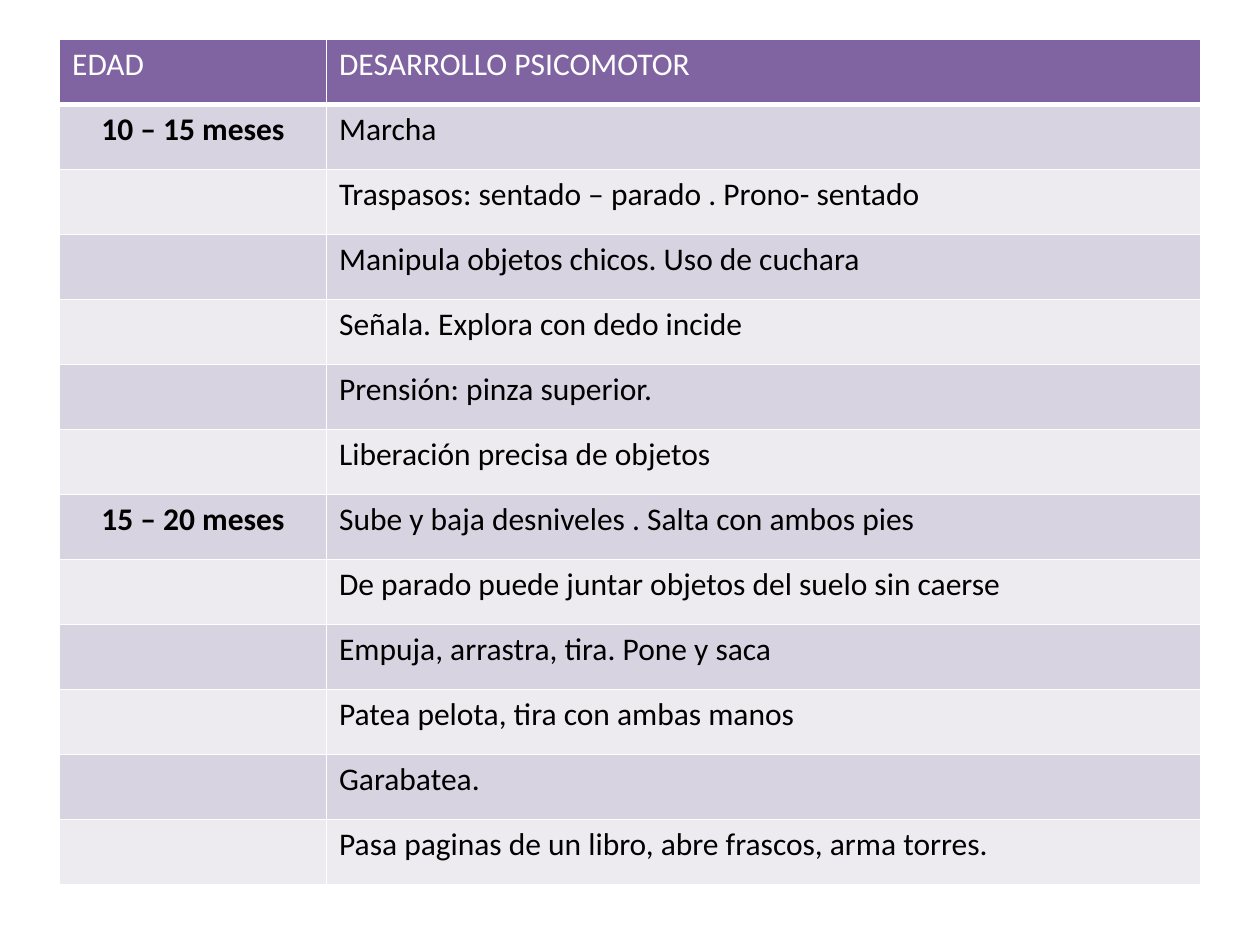
import lxml.etree
import pptx
import pptx.dml.color
import pptx.enum.text
import pptx.oxml.ns
import pptx.util

COLOURS = {
    "header": "8064A2",
    "dark_band": "D8D3E0",
    "light_band": "EDEAF0",
    "white": "FFFFFF",
    "black": "000000",
}
HEADINGS = ("EDAD", "DESARROLLO PSICOMOTOR")
STAGES = {
    "10 – 15 meses": (
        "Marcha",
        "Traspasos: sentado – parado . Prono- sentado",
        "Manipula objetos chicos. Uso de cuchara",
        "Señala. Explora con dedo incide",
        "Prensión: pinza superior.",
        "Liberación precisa de objetos",
    ),
    "15 – 20 meses": (
        "Sube y baja desniveles . Salta con ambos pies",
        "De parado puede juntar objetos del suelo sin caerse",
        "Empuja, arrastra, tira. Pone y saca",
        "Patea pelota, tira con ambas manos",
        "Garabatea.",
        "Pasa paginas de un libro, abre frascos, arma torres.",
    ),
}
AGE_SHARE = 0.234


def rgb(name):
    """Return the named colour."""
    return pptx.dml.color.RGBColor.from_string(COLOURS[name])


def write_text(cell, text, colour="black", bold=False, centred=False):
    """Write one formatted paragraph in a cell."""
    para = cell.text_frame.paragraphs[0]
    if centred:
        para.alignment = pptx.enum.text.PP_ALIGN.CENTER
    span = para.add_run()
    span.text = text
    span.font.name = "Calibri"
    span.font.size = pptx.util.Pt(18)
    span.font.bold = bold
    span.font.color.rgb = rgb(colour)


def style_cell(cell, fill, bottom=1):
    """Give a cell white borders and a solid fill."""
    qualify = pptx.oxml.ns.qn
    properties = cell._tc.get_or_add_tcPr()
    for side, width in (("L", 1), ("R", 1), ("T", 1), ("B", bottom)):
        line = lxml.etree.SubElement(
            properties, qualify(f"a:ln{side}"), w=str(pptx.util.Pt(width))
        )
        solid = lxml.etree.SubElement(line, qualify("a:solidFill"))
        lxml.etree.SubElement(solid, qualify("a:srgbClr"), val=COLOURS["white"])
    cell.fill.solid()
    cell.fill.fore_color.rgb = rgb(fill)


def add_milestones(page, left, top, width, height):
    """Place the table of ages and milestones in the given box."""
    rows = [
        (age if index == 0 else "", milestone)
        for age, milestones in STAGES.items()
        for index, milestone in enumerate(milestones)
    ]
    table = page.shapes.add_table(len(rows) + 1, 2, left, top, width, height).table
    table.columns[0].width = int(width * AGE_SHARE)
    table.columns[1].width = width - table.columns[0].width
    for column, heading in enumerate(HEADINGS):
        cell = table.cell(0, column)
        style_cell(cell, "header", bottom=3)
        write_text(cell, heading, colour="white")
    for number, row in enumerate(rows, start=1):
        band = "dark_band" if number % 2 else "light_band"
        for column, text in enumerate(row):
            cell = table.cell(number, column)
            style_cell(cell, band)
            if text:
                write_text(cell, text, bold=column == 0, centred=column == 0)


def main():
    """Build and save the deck."""
    length = pptx.util.Cm
    deck = pptx.Presentation()
    deck.slide_width, deck.slide_height = length(25.4), length(19.05)
    page = deck.slides.add_slide(deck.slide_layouts[6])
    add_milestones(page, length(1.2), length(0.8), length(23), length(17.03))
    deck.save("out.pptx")


if __name__ == "__main__":
    main()
